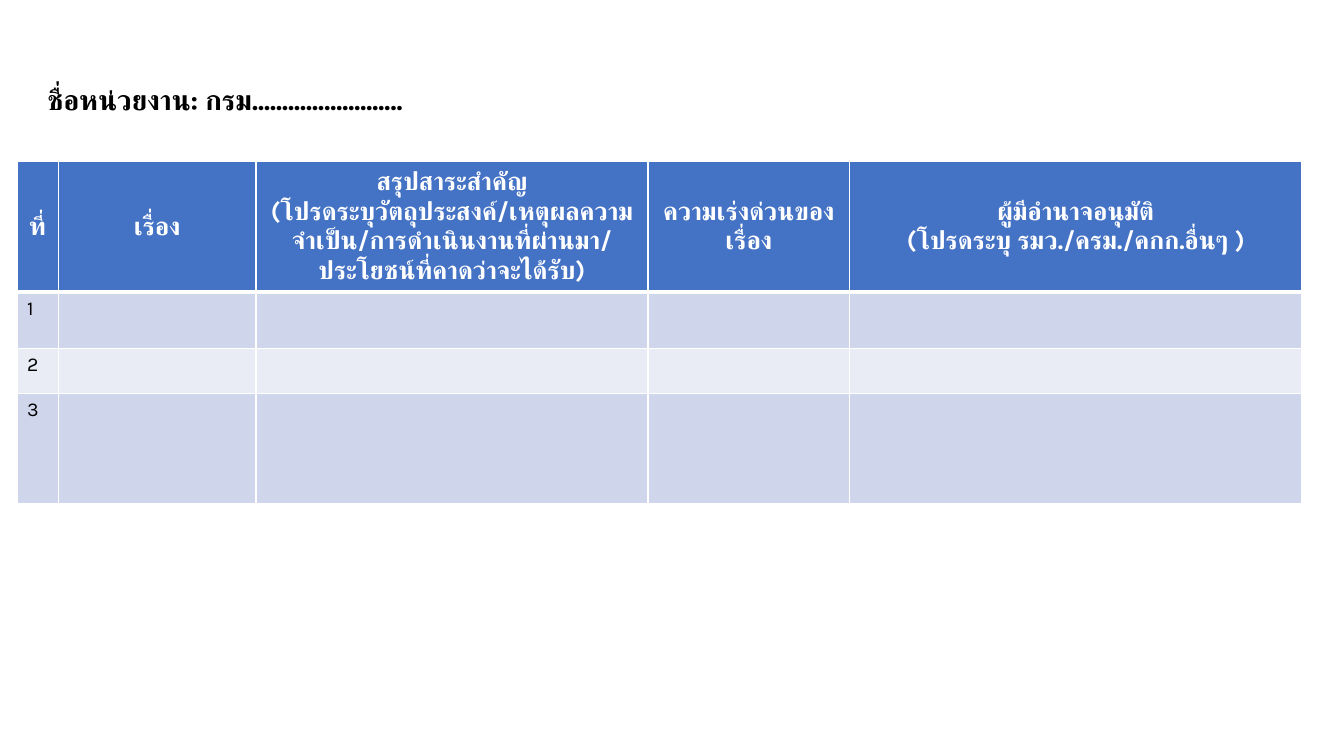
from dataclasses import dataclass

from lxml import etree
from pptx import Presentation
from pptx.dml.color import RGBColor
from pptx.enum.text import MSO_ANCHOR, MSO_AUTO_SIZE, PP_ALIGN
from pptx.oxml.ns import qn
from pptx.util import Cm, Pt

TOP, MIDDLE = MSO_ANCHOR.TOP, MSO_ANCHOR.MIDDLE
LEFT, CENTER = PP_ALIGN.LEFT, PP_ALIGN.CENTER
FIT = MSO_AUTO_SIZE.SHAPE_TO_FIT_TEXT


@dataclass(frozen=True)
class Theme:
    font: str = "Karla"
    black: str = "000000"
    white: str = "FFFFFF"
    head: str = "4472C4"
    bands: tuple = ("CFD5EA", "E9EBF5")
    title_size: int = 20
    head_size: int = 18
    body_size: int = 14


theme = Theme()


def write(frame, text, align, size, color, bold):
    """Fill a text frame; each line of text becomes a paragraph."""
    frame.text = text
    for par in frame.paragraphs:
        par.alignment = align
        for run in par.runs:
            style = {"name": theme.font, "size": Pt(size), "bold": bold}
            for key, value in style.items():
                setattr(run.font, key, value)
            run.font.color.rgb = RGBColor.from_string(color)
            # Thai text takes the complex-script font
            etree.SubElement(run.font._element, qn("a:cs"), typeface=theme.font)


def edge(cell, widths):
    """Draw white borders, with widths in points for each side."""
    props = cell._tc.get_or_add_tcPr()
    for side, width in widths.items():
        line = etree.SubElement(props, qn(f"a:ln{side}"), w=str(Pt(width)))
        fill = etree.SubElement(line, qn("a:solidFill"))
        etree.SubElement(fill, qn("a:srgbClr"), val=theme.white)


prs = Presentation()
prs.slide_width, prs.slide_height = Cm(33.87), Cm(19.05)
slide = prs.slides.add_slide(prs.slide_layouts[5])

# Agency name
title = slide.shapes.title
place = {"left": 0.94, "top": 1.96, "width": 32.93, "height": 1.12}
for key, value in place.items():
    setattr(title, key, Cm(value))
frame = title.text_frame
for key, value in {"word_wrap": True, "auto_size": FIT, "vertical_anchor": TOP}.items():
    setattr(frame, key, value)
write(frame, "ชื่อหน่วยงาน: กรม.........................", LEFT,
      theme.title_size, theme.black, True)

# Table of matters for approval
heads = [
    "ที่",
    "เรื่อง",
    "สรุปสาระสำคัญ\n(โปรดระบุวัตถุประสงค์/เหตุผลความจำเป็น/การดำเนินงานที่ผ่านมา/ประโยชน์ที่คาดว่าจะได้รับ)",
    "ความเร่งด่วนของเรื่อง",
    "ผู้มีอำนาจอนุมัติ\n(โปรดระบุ รมว./ครม./คกก.อื่นๆ )",
]
wide = [1.04, 4.98, 9.88, 5.08, 11.4]
high = [3.1, 1.42, 1.14, 2.77]
table = slide.shapes.add_table(len(high), len(wide), Cm(0.43), Cm(4.06),
                               Cm(sum(wide)), Cm(sum(high))).table
for col, width in zip(table.columns, wide):
    col.width = Cm(width)
for row, height in zip(table.rows, high):
    row.height = Cm(height)

for r, row in enumerate(table.rows):
    for c, cell in enumerate(row.cells):
        edge(cell, {"L": 1, "R": 1, "T": 3 if r == 1 else 1, "B": 3 if r == 0 else 1})
        cell.fill.solid()
        shade = theme.bands[(r - 1) % 2] if r else theme.head
        cell.fill.fore_color.rgb = RGBColor.from_string(shade)
        if r == 0:
            cell.vertical_anchor = MIDDLE
            write(cell.text_frame, heads[c], CENTER, theme.head_size, theme.white, True)
        elif c == 0:
            write(cell.text_frame, str(r), LEFT, theme.body_size, theme.black, False)

prs.save("out.pptx")
